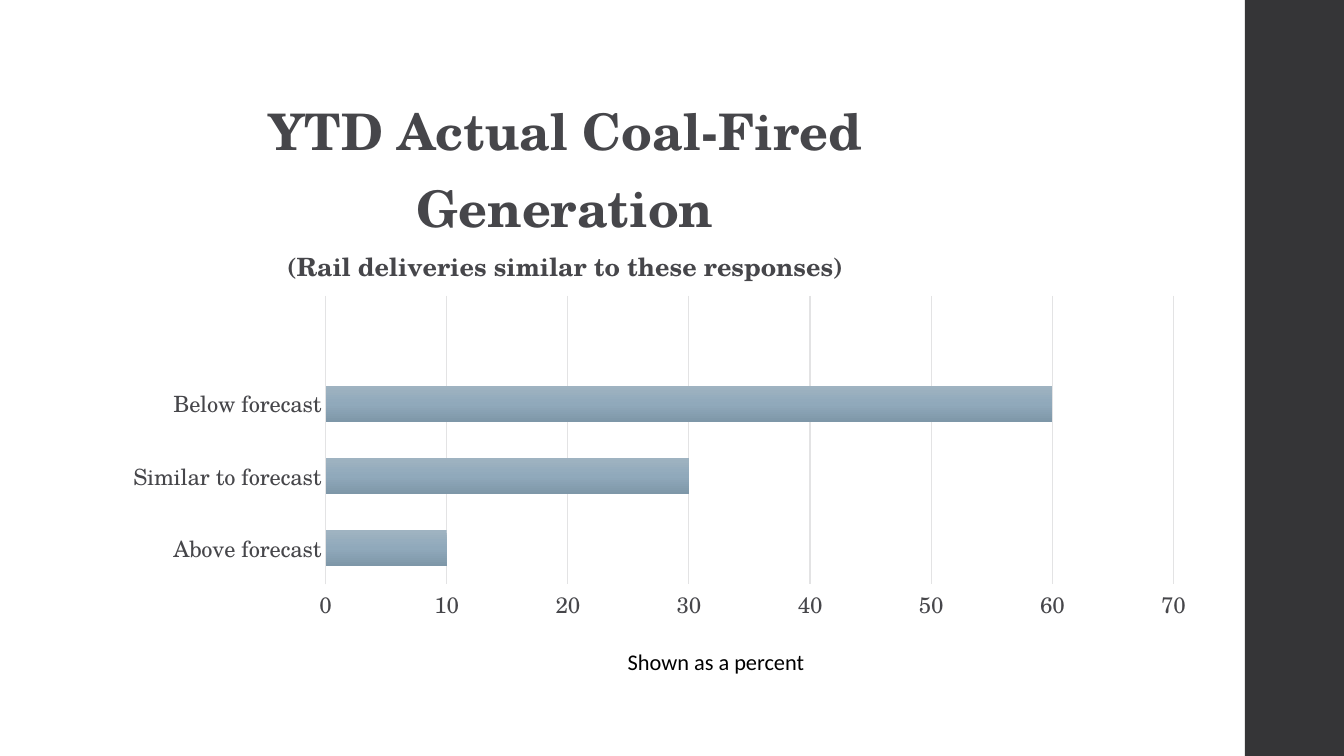
import pptx
import pptx.chart.data
import pptx.dml.color
import pptx.enum.chart
import pptx.enum.shapes
import pptx.enum.text
import pptx.oxml
import pptx.oxml.ns
import pptx.util

Cm, Pt = pptx.util.Cm, pptx.util.Pt
RGB = pptx.dml.color.RGBColor
qn = pptx.oxml.ns.qn

WHITE = RGB(0xFF, 0xFF, 0xFF)
BLACK = RGB(0, 0, 0)
SIDEBAR = RGB(0x35, 0x35, 0x37)
INK = RGB(0x46, 0x46, 0x4A)
GRID = RGB(0xE3, 0xE3, 0xE4)
BAR_STOPS = [(0, RGB(0x9F, 0xB3, 0xC1)), (50, RGB(0x90, 0xA9, 0xBB)), (100, RGB(0x7E, 0x97, 0xA8))]
SERIF = "TeX Gyre Schola"
RESPONSES = [("Above forecast", 10), ("Similar to forecast", 30), ("Below forecast", 60), ("", None)]
TITLE = [("YTD Actual Coal-Fired Generation", 36), ("(Rail deliveries similar to these responses)", 18)]


def set_font(font, **values):
    font.color.rgb = values.pop("color")
    for name, value in values.items():
        setattr(font, name, value)


def place(element, index, inner=False, **fractions):
    """Give a chart part a manual layout, in fractions of the chart area."""
    for old in element.findall(qn("c:layout")):
        element.remove(old)
    settings = {"layoutTarget": "inner"} if inner else {}
    settings |= {f"{side}Mode": "edge" for side in "xy"} | fractions
    body = "".join(f'<c:{tag} val="{value}"/>' for tag, value in settings.items())
    element.insert(index, pptx.oxml.parse_xml(
        f'<c:layout {pptx.oxml.ns.nsdecls("c")}><c:manualLayout>{body}</c:manualLayout></c:layout>'))


def fill_gradient(fmt, stops):
    """Fill from top to bottom through any number of colour stops."""
    fmt.fill.gradient()
    grad = fmt.fill._xPr.find(qn("a:gradFill"))
    stop_xml = "".join(f'<a:gs pos="{pos * 1000}"><a:srgbClr val="{color}"/></a:gs>' for pos, color in stops)
    grad.getparent().replace(grad, pptx.oxml.parse_xml(
        f'<a:gradFill {pptx.oxml.ns.nsdecls("a")}><a:gsLst>{stop_xml}</a:gsLst>'
        '<a:lin ang="5400000" scaled="0"/></a:gradFill>'))


def add_sidebar(s, x, y, w, h):
    sp = s.shapes.add_shape(pptx.enum.shapes.MSO_SHAPE.RECTANGLE, x, y, w, h)
    sp.shadow.inherit = False
    sp.fill.solid()
    sp.fill.fore_color.rgb = SIDEBAR
    sp.line.fill.background()


def add_chart_title(chart):
    tf = chart.chart_title.text_frame
    for i, (text, size) in enumerate(TITLE):
        p = tf.paragraphs[0] if i == 0 else tf.add_paragraph()
        p.alignment = pptx.enum.text.PP_ALIGN.CENTER
        r = p.add_run()
        r.text = text
        set_font(r.font, name=SERIF, size=Pt(size), bold=True, color=INK)
    place(chart.chart_title._element, 1, x=0.14, y=0.04)


def add_forecast_chart(s, x, y, w, h):
    data = pptx.chart.data.CategoryChartData()
    data.categories = [label for label, _ in RESPONSES]
    data.add_series("Series 1", [value for _, value in RESPONSES])
    chart = s.shapes.add_chart(pptx.enum.chart.XL_CHART_TYPE.BAR_CLUSTERED, x, y, w, h, data).chart
    set_font(chart.font, name=SERIF, size=Pt(10), color=BLACK)
    chart.has_legend = False
    add_chart_title(chart)

    plot = chart.plots[0]
    plot.gap_width = 100
    plot.vary_by_categories = False
    fill_gradient(plot.series[0].format, BAR_STOPS)
    place(chart._chartSpace.chart.plotArea, 0, inner=True, x=0.195, y=0.408, w=0.774, h=0.507)

    for axis in (chart.category_axis, chart.value_axis):
        axis.major_tick_mark = axis.minor_tick_mark = pptx.enum.chart.XL_TICK_MARK.NONE
        set_font(axis.tick_labels.font, name=SERIF, size=Pt(16), color=INK)
    chart.category_axis.has_major_gridlines = False
    value_axis = chart.value_axis
    value_axis.minimum_scale, value_axis.maximum_scale, value_axis.major_unit = 0, 70, 10
    value_axis.has_major_gridlines = True
    value_axis.format.line.fill.background()
    for line in (chart.category_axis.format.line, value_axis.major_gridlines.format.line):
        line.color.rgb = GRID
        line.width = Pt(0.75)


def add_unit_note(s, x, y, w, h):
    tf = s.shapes.add_textbox(x, y, w, h).text_frame
    tf.word_wrap = True
    r = tf.paragraphs[0].add_run()
    r.text = "Shown as a percent"
    set_font(r.font, name="Calibri", size=Pt(16), color=BLACK)


def main():
    prs = pptx.Presentation()
    prs.slide_width, prs.slide_height = Cm(33.87), Cm(19.05)
    s = prs.slides.add_slide(prs.slide_layouts[6])
    s.background.fill.solid()
    s.background.fill.fore_color.rgb = WHITE
    add_sidebar(s, Cm(31.37), 0, Cm(2.5), prs.slide_height)
    add_forecast_chart(s, Cm(2.82), Cm(1.6), Cm(27.61), Cm(14.35))
    add_unit_note(s, Cm(15.57), Cm(16.21), Cm(10.13), Cm(0.94))
    prs.save("out.pptx")


if __name__ == "__main__":
    main()
